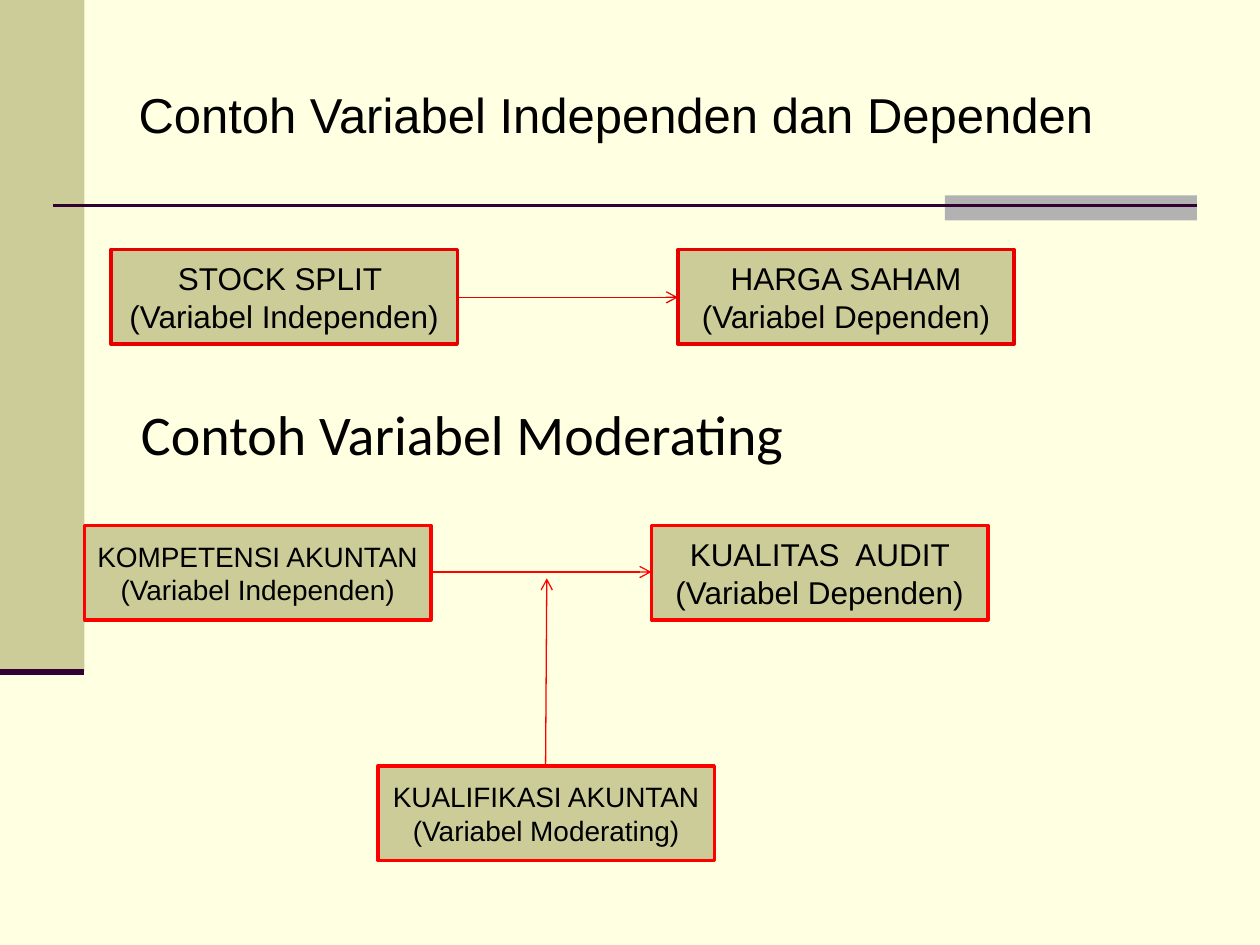
from dataclasses import dataclass

from lxml import etree
from pptx import Presentation
from pptx.dml.color import RGBColor
from pptx.enum.shapes import MSO_CONNECTOR, MSO_SHAPE
from pptx.enum.text import MSO_ANCHOR, MSO_AUTO_SIZE, PP_ALIGN
from pptx.oxml.ns import qn
from pptx.util import Inches, Pt

RECT = MSO_SHAPE.RECTANGLE
STRAIGHT = MSO_CONNECTOR.STRAIGHT
MIDDLE = MSO_ANCHOR.MIDDLE
TOP = MSO_ANCHOR.TOP
NO_FIT = MSO_AUTO_SIZE.NONE
CENTER = PP_ALIGN.CENTER
LEFT = PP_ALIGN.LEFT

CREAM = RGBColor(0xFF, 0xFF, 0xE1)
KHAKI = RGBColor(0xCC, 0xCC, 0x99)
GRAY = RGBColor(0xB2, 0xB2, 0xB2)
PLUM = RGBColor(0x33, 0x00, 0x33)
DARK_RED = RGBColor(0xE7, 0x00, 0x00)
RED = RGBColor(0xFF, 0x00, 0x00)
BLACK = RGBColor(0x00, 0x00, 0x00)

BOX_HEIGHT = 0.75
WIDE = 2.75
NARROW = 2.67
INDENT = 0.38


@dataclass
class Variable:
    left: float
    top: float
    width: float
    text: str
    size: int
    color: RGBColor


@dataclass
class Line:
    start: tuple[float, float]
    end: tuple[float, float]
    color: RGBColor
    width: float
    arrow: bool = False


@dataclass
class Heading:
    left: float
    top: float
    width: float
    text: str
    font: str
    size: int


def format_text(tf, font: str, size: int, align) -> None:
    for p in tf.paragraphs:
        p.alignment = align
        for r in p.runs:
            r.font.name = font
            r.font.size = Pt(size)
            r.font.color.rgb = BLACK


def add_rect(slide, left: float, top: float, width: float, height: float, fill: RGBColor):
    sp = slide.shapes.add_shape(RECT, Inches(left), Inches(top), Inches(width), Inches(height))
    sp.shadow.inherit = False
    sp.fill.solid()
    sp.fill.fore_color.rgb = fill
    sp.line.fill.background()
    return sp


def add_variable(slide, var: Variable) -> None:
    sp = add_rect(slide, var.left, var.top, var.width, BOX_HEIGHT, KHAKI)
    sp.line.color.rgb = var.color
    sp.line.width = Pt(2)
    tf = sp.text_frame
    tf.word_wrap = True
    tf.vertical_anchor = MIDDLE
    tf.text = var.text
    format_text(tf, "Arial", var.size, CENTER)


def add_line(slide, line: Line) -> None:
    points = [Inches(v) for v in line.start + line.end]
    cxn = slide.shapes.add_connector(STRAIGHT, *points)
    cxn.line.color.rgb = line.color
    cxn.line.width = Pt(line.width)
    if line.arrow:
        etree.SubElement(cxn.line._get_or_add_ln(), qn("a:tailEnd"), type="arrow")
    etree.SubElement(cxn._element.spPr, qn("a:effectLst"))


def fill_heading(sp, heading: Heading) -> None:
    sp.left, sp.top = Inches(heading.left), Inches(heading.top)
    sp.width, sp.height = Inches(heading.width), Inches(0.67)
    tf = sp.text_frame
    tf.word_wrap = True
    tf.auto_size = NO_FIT
    tf.vertical_anchor = TOP
    tf.text = heading.text
    format_text(tf, heading.font, heading.size, LEFT)
    p = tf.paragraphs[0]
    p.space_before = Pt(heading.size * 0.2)
    pPr = p._p.get_or_add_pPr()
    pPr.set("marL", str(Inches(INDENT)))
    pPr.set("indent", str(-Inches(INDENT)))
    etree.SubElement(pPr, qn("a:buNone"))


VARIABLES = [
    Variable(0.88, 1.98, WIDE, "STOCK SPLIT \n(Variabel Independen)", 18, DARK_RED),
    Variable(5.38, 1.98, NARROW, "HARGA SAHAM (Variabel Dependen)", 18, DARK_RED),
    Variable(0.67, 4.17, WIDE, "KOMPETENSI AKUNTAN\n(Variabel Independen)", 16, RED),
    Variable(5.17, 4.17, NARROW, "KUALITAS  AUDIT (Variabel Dependen)", 18, RED),
    Variable(3, 6.08, NARROW, "KUALIFIKASI AKUNTAN (Variabel Moderating)", 16, RED),
]
RULES = [
    Line((0.42, 1.63), (9.5, 1.63), PLUM, 1.5),
    Line((0, 5.33), (0.67, 5.33), PLUM, 3.5),
]
ARROWS = [
    Line((3.63, 2.36), (5.38, 2.36), DARK_RED, 0.75, True),
    Line((3.42, 4.54), (5.17, 4.54), RED, 0.75, True),
    Line((4.33, 6.09), (4.34, 4.59), RED, 0.75, True),
]
MAIN_HEADING = Heading(1, 0.62, 9, "Contoh Variabel Independen dan Dependen", "Arial", 28)
SUB_HEADING = Heading(1.02, 3.12, 8.45, "Contoh Variabel Moderating", "Calibri", 32)


def main() -> None:
    prs = Presentation()
    prs.slide_width, prs.slide_height = Inches(10), Inches(7.5)
    slide = prs.slides.add_slide(prs.slide_layouts[1])
    slide.background.fill.solid()
    slide.background.fill.fore_color.rgb = CREAM
    title = slide.shapes.title._element
    title.getparent().remove(title)

    add_rect(slide, 0, 0, 0.67, 5.33, KHAKI)
    add_rect(slide, 7.5, 1.55, 2, 0.2, GRAY)
    for rule in RULES:
        add_line(slide, rule)
    fill_heading(slide.placeholders[1], MAIN_HEADING)
    fill_heading(slide.shapes.add_textbox(0, 0, 0, 0), SUB_HEADING)
    for var in VARIABLES:
        add_variable(slide, var)
    for arrow in ARROWS:
        add_line(slide, arrow)
    prs.save("out.pptx")


if __name__ == "__main__":
    main()
